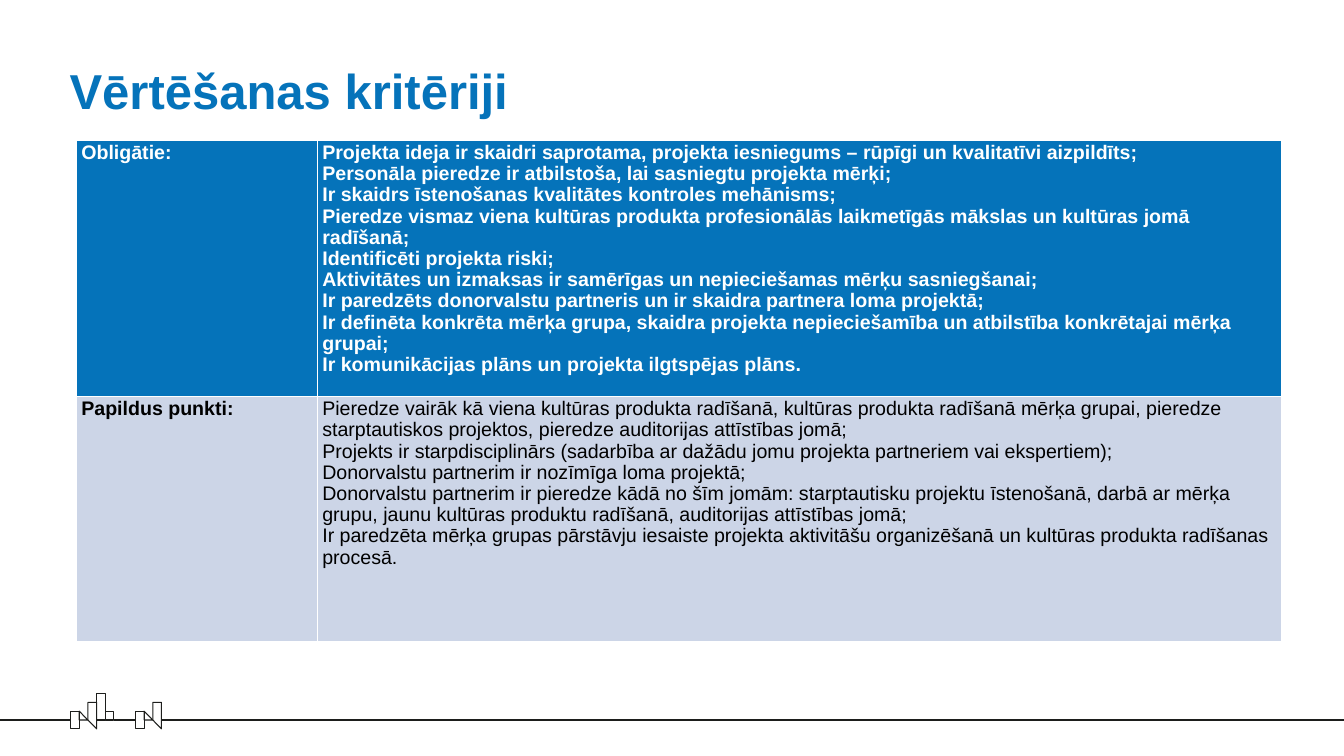
from dataclasses import dataclass

import pptx
import pptx.dml.color
import pptx.enum.shapes
import pptx.enum.text
import pptx.oxml
import pptx.oxml.ns
import pptx.shapes.autoshape
import pptx.slide
import pptx.table
import pptx.util

Pt = pptx.util.Pt
RGB = pptx.dml.color.RGBColor


@dataclass(frozen=True)
class Theme:
    font: str = "Arial"
    blue: str = "0573BA"
    pale: str = "CCD5E7"
    white: str = "FFFFFF"
    black: str = "000000"
    ink: str = "1D1E1C"
    title_size: float = 70
    body_size: float = 28
    body_spacing: float = 0.97
    outline: float = 1.5


@dataclass(frozen=True)
class CriteriaRow:
    label: str
    criteria: tuple[str, ...]
    fill: str
    text: str
    bold: bool


THEME = Theme()
SLIDE_WIDTH, SLIDE_HEIGHT = 1919.52, 1080
COLUMN_WIDTHS = (344.16, 1377.36)
ROW_HEIGHT = 350

ROWS = (
    CriteriaRow("Obligātie:", (
        "Projekta ideja ir skaidri saprotama, projekta iesniegums – rūpīgi un kvalitatīvi aizpildīts;",
        "Personāla pieredze ir atbilstoša, lai sasniegtu projekta mērķi;",
        "Ir skaidrs īstenošanas kvalitātes kontroles mehānisms;",
        "Pieredze vismaz viena kultūras produkta profesionālās laikmetīgās mākslas un kultūras jomā radīšanā;",
        "Identificēti projekta riski;",
        "Aktivitātes un izmaksas ir samērīgas un nepieciešamas mērķu sasniegšanai;",
        "Ir paredzēts donorvalstu partneris un ir skaidra partnera loma projektā;",
        "Ir definēta konkrēta mērķa grupa, skaidra projekta nepieciešamība un atbilstība "
        "konkrētajai mērķa grupai;",
        "Ir komunikācijas plāns un projekta ilgtspējas plāns.",
    ), THEME.blue, THEME.white, True),
    CriteriaRow("Papildus punkti:", (
        "Pieredze vairāk kā viena kultūras produkta radīšanā, kultūras produkta radīšanā mērķa grupai, "
        "pieredze starptautiskos projektos, pieredze auditorijas attīstības jomā;",
        "Projekts ir starpdisciplinārs (sadarbība ar dažādu jomu projekta partneriem vai ekspertiem);",
        "Donorvalstu partnerim ir nozīmīga loma projektā;",
        "Donorvalstu partnerim ir pieredze kādā no šīm jomām: starptautisku projektu īstenošanā, "
        "darbā ar mērķa grupu, jaunu kultūras produktu radīšanā, auditorijas attīstības jomā;",
        "Ir paredzēta mērķa grupas pārstāvju iesaiste projekta aktivitāšu organizēšanā un "
        "kultūras produkta radīšanas procesā.",
    ), THEME.pale, THEME.black, False),
)

# Skyline grid: the ground line and the width of one building
GROUND = 1028.6
STEP = 12.4
HALF = 12.6
FIRST_N, SECOND_N = 100.8, 193.4


def add_run(paragraph, text: str, size: float, color: str, bold: bool) -> None:
    run = paragraph.add_run()
    run.text = text
    run.font.name = THEME.font
    run.font.size = Pt(size)
    run.font.bold = bold
    run.font.color.rgb = RGB.from_string(color)


def set_outline(line) -> None:
    line.color.rgb = RGB.from_string(THEME.ink)
    line.width = Pt(THEME.outline)


def add_building(slide: pptx.slide.Slide, left: float, top: float,
                 height: float) -> pptx.shapes.autoshape.Shape:
    building = slide.shapes.add_shape(
        pptx.enum.shapes.MSO_SHAPE.RECTANGLE, Pt(left), Pt(top), Pt(STEP), Pt(height))
    building.shadow.inherit = False
    building.fill.background()
    set_outline(building.line)
    return building


def add_outline(slide: pptx.slide.Slide, points: list[tuple[float, float]]) -> None:
    corners = [(Pt(x), Pt(y)) for x, y in points]
    builder = slide.shapes.build_freeform(*corners[0])
    builder.add_line_segments(corners[1:], close=True)
    outline = builder.convert_to_shape()
    outline.shadow.inherit = False
    outline.fill.background()
    set_outline(outline.line)


def add_n_block(slide: pptx.slide.Slide, left: float) -> pptx.shapes.autoshape.Shape:
    """Draw an N-shaped group of houses and return its left building."""
    middle, right = left + 2 * STEP, left + 3 * STEP
    add_outline(slide, [(middle, GROUND), (left + STEP, GROUND), (left + STEP, GROUND - HALF)])
    add_outline(slide, [(middle, GROUND - 2 * HALF), (middle, GROUND),
                        (right, GROUND + HALF), (right, GROUND - 2 * HALF)])
    return add_building(slide, left, GROUND - HALF, 2 * HALF)


def add_ground(slide: pptx.slide.Slide, start: float, end: float,
               building: pptx.shapes.autoshape.Shape | None = None) -> None:
    ground = slide.shapes.add_connector(
        pptx.enum.shapes.MSO_CONNECTOR.STRAIGHT, Pt(start), Pt(GROUND), Pt(end), Pt(GROUND))
    if building is not None:
        ground.end_connect(building, 1)
    set_outline(ground.line)
    properties = ground._element.spPr
    properties.append(properties.makeelement(pptx.oxml.ns.qn("a:effectLst"), {}))


def add_skyline(slide: pptx.slide.Slide) -> None:
    first_house = add_n_block(slide, FIRST_N)
    second_house = add_n_block(slide, SECOND_N)
    tower_left = FIRST_N + 3 * STEP
    add_building(slide, tower_left, GROUND - 3 * HALF, 3 * HALF)
    add_building(slide, tower_left + STEP, GROUND - HALF, HALF)
    add_ground(slide, 0, FIRST_N, first_house)
    add_ground(slide, tower_left + 2 * STEP, SECOND_N, second_house)
    add_ground(slide, SECOND_N + 3 * STEP, SLIDE_WIDTH)


def add_title(slide: pptx.slide.Slide, text: str) -> None:
    title = slide.shapes.add_textbox(Pt(99.4), Pt(86.4), Pt(1721.5), Pt(85)).text_frame
    title.word_wrap = True
    title.vertical_anchor = pptx.enum.text.MSO_ANCHOR.MIDDLE
    title.margin_left = title.margin_top = title.margin_right = title.margin_bottom = 0
    add_run(title.paragraphs[0], text, THEME.title_size, THEME.blue, True)


def set_borders(cell: pptx.table._Cell) -> None:
    properties = cell._tc.get_or_add_tcPr()
    for index, side in enumerate(("lnL", "lnR", "lnT", "lnB")):
        properties.insert(index, pptx.oxml.parse_xml(
            f'<a:{side} {pptx.oxml.ns.nsdecls("a")} w="{Pt(1)}"><a:solidFill>'
            f'<a:srgbClr val="{THEME.white}"/></a:solidFill></a:{side}>'))


def fill_cell(cell: pptx.table._Cell, lines: tuple[str, ...], row: CriteriaRow, bold: bool) -> None:
    cell.fill.solid()
    cell.fill.fore_color.rgb = RGB.from_string(row.fill)
    set_borders(cell)
    frame = cell.text_frame
    for index, line in enumerate(lines):
        paragraph = frame.add_paragraph() if index else frame.paragraphs[0]
        paragraph.line_spacing = THEME.body_spacing
        add_run(paragraph, line, THEME.body_size, row.text, bold)


def add_criteria(slide: pptx.slide.Slide) -> None:
    criteria = slide.shapes.add_table(
        len(ROWS), len(COLUMN_WIDTHS), Pt(109), Pt(200.2),
        Pt(sum(COLUMN_WIDTHS)), Pt(ROW_HEIGHT * len(ROWS))).table
    for column, width in zip(criteria.columns, COLUMN_WIDTHS):
        column.width = Pt(width)
    for index, row in enumerate(ROWS):
        criteria.rows[index].height = Pt(ROW_HEIGHT)
        fill_cell(criteria.cell(index, 0), (row.label,), row, True)
        fill_cell(criteria.cell(index, 1), row.criteria, row, row.bold)


def main() -> None:
    deck = pptx.Presentation()
    deck.slide_width, deck.slide_height = Pt(SLIDE_WIDTH), Pt(SLIDE_HEIGHT)
    slide = deck.slides.add_slide(deck.slide_layouts[6])
    add_skyline(slide)
    add_title(slide, "Vērtēšanas kritēriji")
    add_criteria(slide)
    deck.save("out.pptx")


if __name__ == "__main__":
    main()
